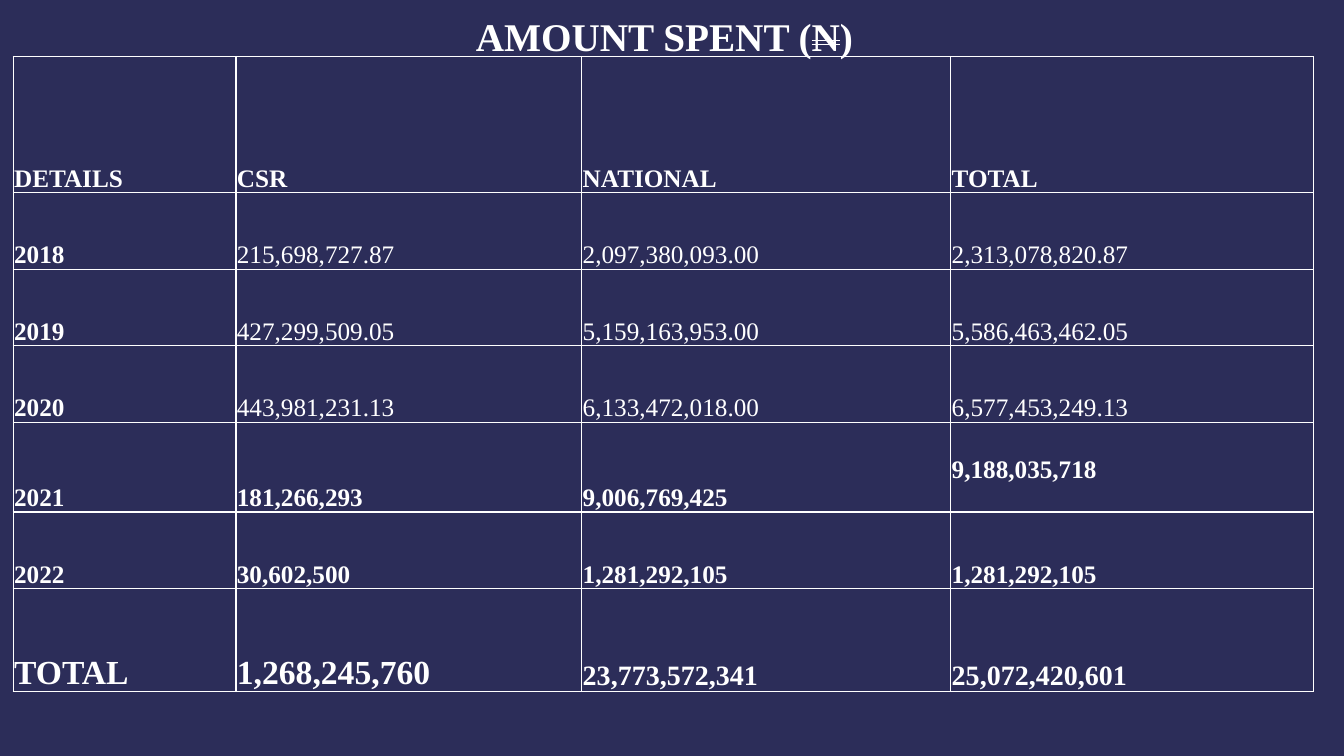
from lxml.etree import SubElement
from pptx import Presentation
from pptx.dml.color import RGBColor
from pptx.enum.text import MSO_ANCHOR, PP_ALIGN
from pptx.oxml.ns import qn
from pptx.util import Pt

PX = 9144  # 100 px to the inch
NAVY = RGBColor(0x2C, 0x2D, 0x59)
WHITE = RGBColor(0xFF, 0xFF, 0xFF)
FACE = "Times New Roman"

COLS = [221, 343, 366, 360]
HEIGHTS = [135, 76, 76, 76, 89, 76, 102]
ROWS = [
    ["DETAILS", "CSR", "NATIONAL", "TOTAL"],
    ["2018", "215,698,727.87", "2,097,380,093.00", "2,313,078,820.87"],
    ["2019", "427,299,509.05", "5,159,163,953.00", "5,586,463,462.05"],
    ["2020", "443,981,231.13", "6,133,472,018.00", "6,577,453,249.13"],
    ["2021", "181,266,293", "9,006,769,425", "9,188,035,718"],
    ["2022", "30,602,500", "1,281,292,105", "1,281,292,105"],
    ["TOTAL", "1,268,245,760", "23,773,572,341", "25,072,420,601"],
]
PLAIN = range(1, 4)  # years whose amounts are not bold
LAST = len(ROWS) - 1
RAISED = (4, 3)  # this amount sits one line above the cell's foot


def scale(*box):
    return [n * PX for n in box]


def style(run, size, bold=True):
    font = run.font
    font.name, font.size, font.bold = FACE, Pt(size), bold
    font.color.rgb = WHITE


def add_title(slide, box):
    frame = slide.shapes.add_textbox(*scale(*box)).text_frame
    frame.word_wrap = True
    para = frame.paragraphs[0]
    para.alignment = PP_ALIGN.CENTER
    para.line_spacing = 0.9
    para.space_before = Pt(10)
    for text in ("AMOUNT SPENT (", "N", ")"):
        run = para.add_run()
        run.text = text
        style(run, 28)
        # A struck N stands for the naira sign
        if text == "N":
            run.font._element.set("strike", "dblStrike")


def add_edges(cell):
    props = cell._tc.get_or_add_tcPr()
    for side in ("lnL", "lnR", "lnT", "lnB"):
        line = SubElement(props, qn(f"a:{side}"), w=str(Pt(1)))
        fill = SubElement(line, qn("a:solidFill"))
        SubElement(fill, qn("a:srgbClr"), val=str(WHITE))


def fill_cell(cell, row, col):
    cell.text_frame.text = ROWS[row][col]
    cell.vertical_anchor = MSO_ANCHOR.BOTTOM
    cell.margin_left = cell.margin_right = cell.margin_top = PX
    cell.margin_bottom = 28 * PX if (row, col) == RAISED else 0
    size = 18
    if row == LAST:
        size = 24 if col < 2 else 20
    bold = col == 0 or row not in PLAIN
    style(cell.text_frame.paragraphs[0].runs[0], size, bold)
    add_edges(cell)
    cell.fill.background()


def add_sums(slide, box):
    shape = slide.shapes.add_table(len(ROWS), len(COLS), *scale(*box))
    table = shape.table
    table.first_row = table.horz_banding = False
    for col, width in zip(table.columns, COLS):
        col.width = width * PX
    for row, height in zip(table.rows, HEIGHTS):
        row.height = height * PX
    for row in range(len(ROWS)):
        for col in range(len(COLS)):
            fill_cell(table.cell(row, col), row, col)


def main():
    deck = Presentation()
    deck.slide_width, deck.slide_height = scale(1333, 750)
    slide = deck.slides.add_slide(deck.slide_layouts[6])
    # Background
    back = slide.background.fill
    back.solid()
    back.fore_color.rgb = NAVY
    # Heading and table
    add_title(slide, (265, 13, 788, 94))
    add_sums(slide, (13, 56, sum(COLS), sum(HEIGHTS)))
    deck.save("out.pptx")


if __name__ == "__main__":
    main()
